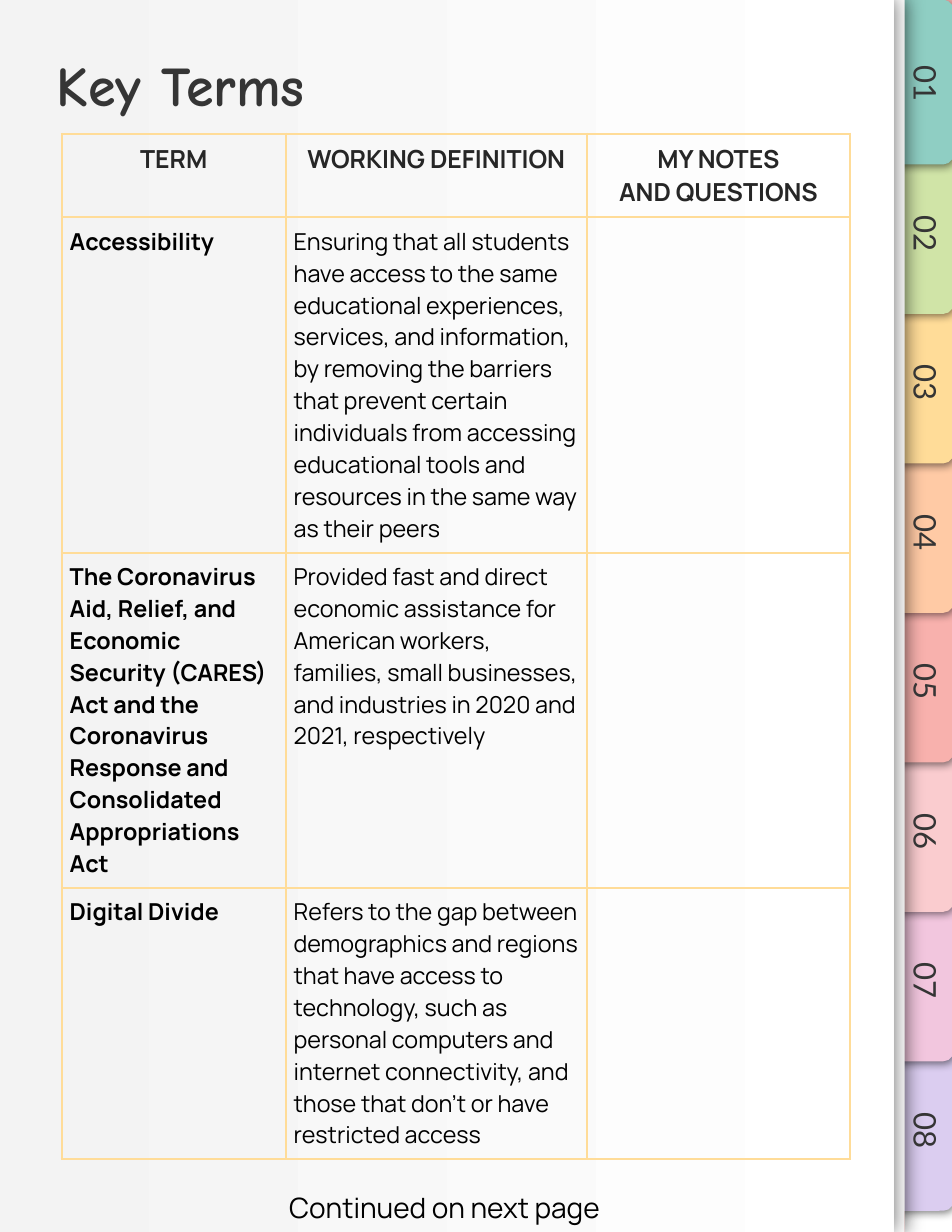
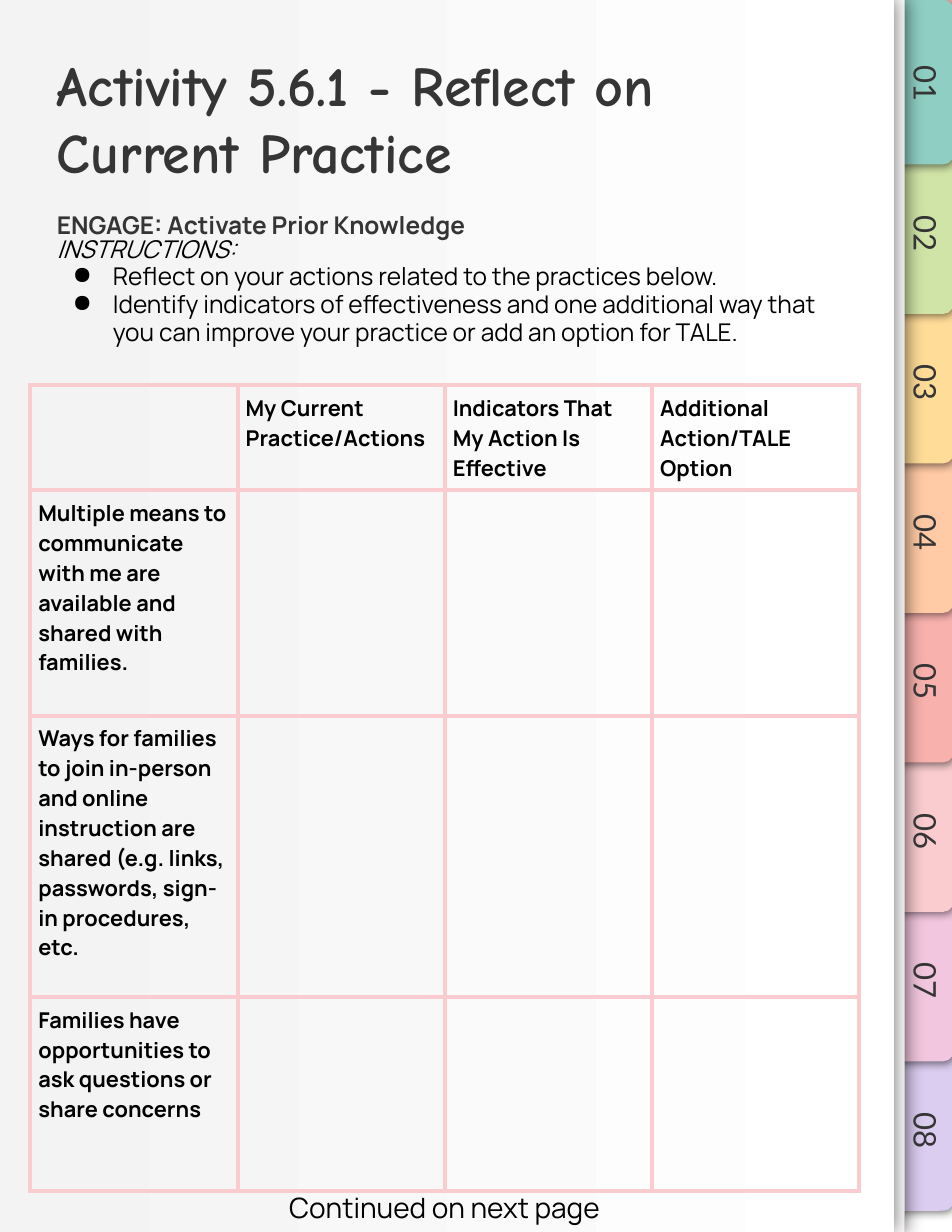
from lxml import etree
from pptx import Presentation
from pptx.dml.color import RGBColor
from pptx.enum import shapes, text
from pptx.oxml import ns
from pptx.util import Cm, Pt

INK = RGBColor(0x35, 0x35, 0x35)
HEADING = RGBColor(0x26, 0x26, 0x26)
BLACK = RGBColor(0, 0, 0)
WHITE = RGBColor(0xFF, 0xFF, 0xFF)
PAPER_EDGE = RGBColor(0xF3, 0xF3, 0xF3)
TEAL = RGBColor(0x8F, 0xCE, 0xC3)
GREEN = RGBColor(0xD0, 0xE4, 0xA7)
YELLOW = RGBColor(0xFF, 0xDC, 0x98)
ORANGE = RGBColor(0xFF, 0xCA, 0xA5)
CORAL = RGBColor(0xF8, 0xB1, 0xAD)
PINK = RGBColor(0xFA, 0xCC, 0xCF)
ORCHID = RGBColor(0xF2, 0xC6, 0xDE)
LILAC = RGBColor(0xDB, 0xCD, 0xF0)

TITLE_FONT, TAB_FONT, BODY_FONT = "Comic Neue", "Lato", "Manrope"
CENTER = text.PP_ALIGN.CENTER

# Content
TABS = [TEAL, GREEN, YELLOW, ORANGE, CORAL, PINK, ORCHID, LILAC]
CONTINUED = "Continued on next page"

TERMS_HEADER = ["TERM", "WORKING DEFINITION", "MY NOTES\nAND QUESTIONS"]
TERMS = [
    ("Accessibility",
     "Ensuring that all students have access to the same educational "
     "experiences, services, and information, by removing the barriers that "
     "prevent certain individuals from accessing educational tools and "
     "resources in the same way as their peers", ""),
    ("The Coronavirus Aid, Relief, and Economic Security (CARES) Act and the "
     "Coronavirus Response and Consolidated Appropriations Act",
     "Provided fast and direct economic assistance for American workers, "
     "families, small businesses, and industries in 2020 and 2021, "
     "respectively", ""),
    ("Digital Divide",
     "Refers to the gap between demographics and regions that have access to "
     "technology, such as personal computers and internet connectivity, and "
     "those that don't or have restricted access", ""),
]

ENGAGE = "ENGAGE: Activate Prior Knowledge"
INSTRUCTIONS = [
    "Reflect on your actions related to the practices below.",
    "Identify indicators of effectiveness and one additional way that you can "
    "improve your practice or add an option for TALE.",
]
PRACTICE_HEADER = ["", "My Current Practice/Actions",
                   "Indicators That My Action Is Effective",
                   "Additional Action/TALE Option"]
PRACTICES = [
    "Multiple means to communicate with me are available and shared with "
    "families.",
    "Ways for families to join in-person and online instruction are shared "
    "(e.g. links, passwords, sign-in procedures, etc.",
    "Families have opportunities to ask questions or share concerns",
]

# Geometry in centimetres
PAGE_W, PAGE_H = 21.59, 27.94
SHEET_W = 20.27
TAB_STEP = 3.39
CELL_MARGIN = Cm(0.18)


def box(left, top, width, height):
    return [Cm(length) for length in (left, top, width, height)]


def add_run(paragraph, words, size, color, font=BODY_FONT, bold=False, italic=False):
    run = paragraph.add_run()
    run.text = words
    run.font.name, run.font.size = font, Pt(size)
    run.font.bold, run.font.italic = bold, italic
    run.font.color.rgb = color


def add_frame(slide, place):
    """Add a wrapping text box and return it with its text frame."""
    holder = slide.shapes.add_textbox(*place)
    frame = holder.text_frame
    frame.word_wrap = True
    frame.margin_left = frame.margin_right = Cm(0.25)
    frame.margin_top = frame.margin_bottom = Cm(0.25)
    return holder, frame


def add_panel(slide, kind, place, color, shadow=None):
    """Add a borderless shape; shadow is (blur pt, distance pt, degrees)."""
    panel = slide.shapes.add_shape(kind, *place)
    panel.fill.solid()
    panel.fill.fore_color.rgb = color
    panel.line.fill.background()
    panel.shadow.inherit = False
    if shadow:
        blur, distance, angle = shadow
        effects = panel.element.spPr.find(ns.qn("a:effectLst"))
        outer = etree.SubElement(
            effects, ns.qn("a:outerShdw"), blurRad=str(Pt(blur)),
            dist=str(Pt(distance)), dir=str(angle * 60000),
            algn="bl", rotWithShape="0")
        shade = etree.SubElement(outer, ns.qn("a:srgbClr"), val=str(BLACK))
        etree.SubElement(shade, ns.qn("a:alpha"), val="50000")
    return panel


def draw_notebook(slide):
    rectangle = shapes.MSO_SHAPE.RECTANGLE
    add_panel(slide, rectangle, box(20.52, 21.79, 1.07, 6.15), WHITE)
    for index, color in reversed(list(enumerate(TABS))):
        tab = add_panel(slide, shapes.MSO_SHAPE.ROUND_2_SAME_RECTANGLE,
                        box(19.08, 1.19 + index * TAB_STEP, 3.73, 1.35),
                        color, (5.6, 1.5, 61))
        tab.rotation = 90

    add_panel(slide, rectangle, box(0.25, 0, SHEET_W, PAGE_H), WHITE, (12.4, 0.8, 0))
    sheet = add_panel(slide, rectangle, box(0, 0, SHEET_W, PAGE_H), WHITE, (12.4, 0.8, 0))
    sheet.fill.gradient()
    sheet.fill.gradient_angle = 0
    for stop, color in zip(sheet.fill.gradient_stops, (PAPER_EDGE, WHITE)):
        stop.color.rgb = color

    for index in range(len(TABS)):
        label, frame = add_frame(slide, box(19.3, 1.1 + index * TAB_STEP, 3.66, 1.6))
        label.rotation = 90
        frame.vertical_anchor = text.MSO_ANCHOR.BOTTOM
        number = frame.paragraphs[0]
        number.alignment = CENTER
        add_run(number, f"{index + 1:02}", 20, INK, TAB_FONT)


def prepare_layout(prs):
    """Put the notebook and the title position on the title-only layout."""
    backdrop = prs.slide_master.background.fill
    backdrop.solid()
    backdrop.fore_color.rgb = CORAL
    layout = prs.slide_layouts[5]
    for holder in list(layout.placeholders):
        if holder.placeholder_format.type == shapes.PP_PLACEHOLDER.TITLE:
            holder.left, holder.top, holder.width, holder.height = box(1.04, 0.89, 18.08, 1.6)
        else:
            layout.shapes.element.remove(holder.element)
    return layout


def move_to_layout(parts, layout):
    for number, part in enumerate(parts, 20):
        part.element.nvSpPr.cNvPr.set("id", str(number))
        layout.shapes.element.append(part.element)


def fill_title(slide, words):
    frame = slide.shapes.title.text_frame
    frame.word_wrap = True
    frame.auto_size = text.MSO_AUTO_SIZE.NONE
    frame.vertical_anchor = text.MSO_ANCHOR.TOP
    frame.margin_left = frame.margin_top = Cm(0.25)
    heading = frame.paragraphs[0]
    heading.alignment = text.PP_ALIGN.LEFT
    add_run(heading, words, 36, INK, TITLE_FONT, bold=True)


def add_continued(slide):
    _, frame = add_frame(slide, box(5.56, 26.75, 9.04, 1.27))
    frame.paragraphs[0].alignment = CENTER
    add_run(frame.paragraphs[0], CONTINUED, 18, BLACK)


def style_cell(cell, border, width):
    cell.margin_left = cell.margin_right = CELL_MARGIN
    cell.margin_top = cell.margin_bottom = CELL_MARGIN
    properties = cell._tc.get_or_add_tcPr()
    for side in ("lnL", "lnR", "lnT", "lnB"):
        line = etree.SubElement(properties, ns.qn(f"a:{side}"), w=str(Pt(width)))
        solid = etree.SubElement(line, ns.qn("a:solidFill"))
        etree.SubElement(solid, ns.qn("a:srgbClr"), val=str(border))
    cell.fill.background()


def add_grid(slide, left, top, widths, heights, rows, border, border_width, style):
    """Add a table; style(row, column) gives the run settings and alignment."""
    table = slide.shapes.add_table(
        len(rows), len(widths), *box(left, top, sum(widths), sum(heights))).table
    table.first_row = table.horz_banding = False
    for column, width in zip(table.columns, widths):
        column.width = Cm(width)
    for row, height in zip(table.rows, heights):
        row.height = Cm(height)
    for r, row in enumerate(rows):
        for c, words in enumerate(row):
            cell = table.cell(r, c)
            style_cell(cell, border, border_width)
            if not words:
                continue
            settings, alignment = style(r, c)
            frame = cell.text_frame
            for i, line in enumerate(words.split("\n")):
                paragraph = frame.add_paragraph() if i else frame.paragraphs[0]
                paragraph.alignment = alignment
                add_run(paragraph, line, **settings)


def terms_style(row, column):
    if row == 0:
        return dict(size=16, color=HEADING, bold=True), CENTER
    return dict(size=15, color=BLACK, bold=column == 0), text.PP_ALIGN.LEFT


def practice_style(row, column):
    return dict(size=14, color=BLACK, bold=True), text.PP_ALIGN.LEFT


def add_bullet(paragraph):
    properties = paragraph._p.get_or_add_pPr()
    properties.set("marL", str(Cm(1.27)))
    properties.set("indent", str(Cm(-0.91)))
    color = etree.SubElement(properties, ns.qn("a:buClr"))
    etree.SubElement(color, ns.qn("a:srgbClr"), val=str(BLACK))
    etree.SubElement(properties, ns.qn("a:buChar"), char="●")


def add_instructions(slide):
    _, frame = add_frame(slide, box(1.04, 4.39, 18.08, 4.57))
    engage = frame.paragraphs[0]
    engage.line_spacing = 1.2
    add_run(engage, ENGAGE, 15.7, INK, bold=True)
    label = frame.add_paragraph()
    label.line_spacing = 0.8
    add_run(label, "INSTRUCTIONS:", 15.7, BLACK, italic=True)
    for instruction in INSTRUCTIONS:
        step = frame.add_paragraph()
        step.line_spacing = 0.95
        add_bullet(step)
        add_run(step, instruction, 15.7, BLACK)


def main():
    prs = Presentation()
    prs.slide_width, prs.slide_height = Cm(PAGE_W), Cm(PAGE_H)
    layout = prepare_layout(prs)

    key_terms = prs.slides.add_slide(layout)
    draw_notebook(key_terms)
    move_to_layout(list(key_terms.shapes)[1:], layout)
    fill_title(key_terms, "Key Terms")
    add_grid(key_terms, 1.4, 3.03, [5.08, 6.83, 5.97], [1.88, 7.6, 7.6, 6.15],
             [TERMS_HEADER, *TERMS], YELLOW, 1.5, terms_style)
    add_continued(key_terms)

    activity = prs.slides.add_slide(layout)
    fill_title(activity, "Activity 5.6.1 - Reflect on Current Practice")
    add_instructions(activity)
    add_grid(activity, 0.69, 8.74, [4.7] * 4, [2.38, 5.11, 6.38, 4.4],
             [PRACTICE_HEADER, *([practice, "", "", ""] for practice in PRACTICES)],
             PINK, 3, practice_style)
    add_continued(activity)

    prs.save("out.pptx")


if __name__ == "__main__":
    main()
